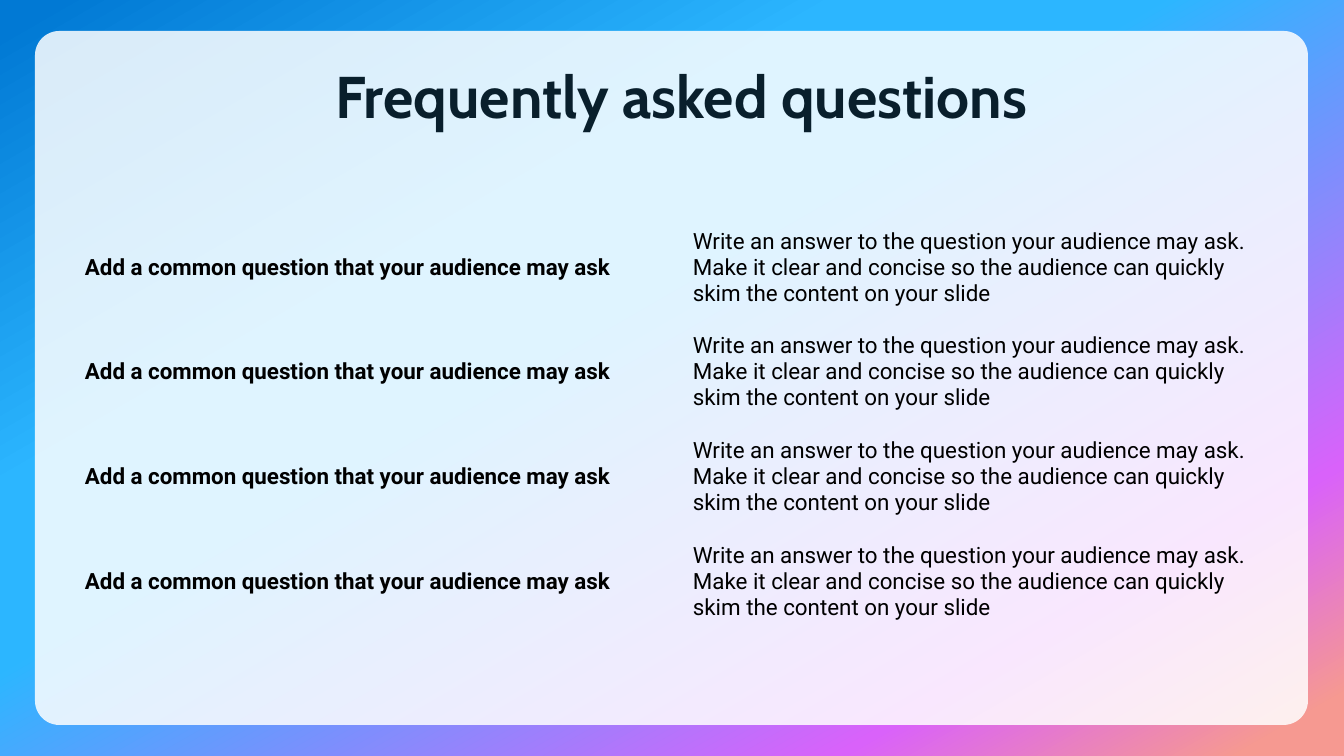
from lxml import etree
from pptx import Presentation
from pptx import util as u
from pptx.dml.color import RGBColor
from pptx.enum import shapes, text
from pptx.oxml.ns import qn

SCALE = 12192000 / 1344
WHITE = RGBColor(0xFF, 0xFF, 0xFF)
BLACK = RGBColor(0, 0, 0)
NAVY = RGBColor(0x09, 0x1F, 0x2C)
GLOW = [
    (2, RGBColor(0x01, 0x79, 0xD4)),
    (32, RGBColor(0x2C, 0xB6, 0xFF)),
    (44, RGBColor(0x2D, 0xB6, 0xFF)),
    (81, RGBColor(0xD9, 0x62, 0xFA)),
    (96, RGBColor(0xF6, 0x99, 0x91)),
]
PLAIN = "{2D5ABB26-0587-4C30-8999-92F81FD0307C}"

QUERY = "Add a common question that your audience may ask"
REPLY = ("Write an answer to the question your audience may ask. "
         "Make it clear and concise so the audience can quickly "
         "skim the content on your slide")
FAQ = [(QUERY, REPLY)] * 4


def px(n):
    return u.Emu(round(n * SCALE))


class Deck:
    head = "Cabin"
    body = "Roboto"

    def __init__(self, wide, high):
        self.prs = Presentation()
        self.prs.slide_width, self.prs.slide_height = px(wide), px(high)
        self.slide = self.prs.slides.add_slide(self.prs.slide_layouts[6])

    def backdrop(self, stops, angle):
        """Fill the background; the angle runs counter-clockwise."""
        fill = self.slide.background.fill
        fill.gradient()
        fill.gradient_angle = angle
        group = next(self.slide.element.iter(qn("a:gsLst")))
        for old in list(group):
            group.remove(old)
        for pos, color in stops:
            stop = etree.SubElement(group, qn("a:gs"), pos=str(pos * 1000))
            etree.SubElement(stop, qn("a:srgbClr"), val=str(color))

    def panel(self, x, y, w, h, color, alpha, bend):
        """Add a rounded card; alpha is its opacity in percent."""
        card = self.slide.shapes.add_shape(
            shapes.MSO_SHAPE.ROUNDED_RECTANGLE, px(x), px(y), px(w), px(h))
        card.adjustments[0] = bend
        card.shadow.inherit = False
        card.fill.solid()
        card.fill.fore_color.rgb = color
        card.line.fill.background()
        tint = next(card.element.spPr.iter(qn("a:srgbClr")))
        etree.SubElement(tint, qn("a:alpha"), val=str(alpha * 1000))

    def run(self, para, words, font, size, color, bold):
        run = para.add_run()
        run.text = words
        run.font.name = font
        run.font.size = u.Pt(size)
        run.font.bold = bold
        run.font.color.rgb = color

    def title(self, x, y, w, h, words):
        box = self.slide.shapes.add_textbox(px(x), px(y), px(w), px(h))
        frame = box.text_frame
        frame.word_wrap = True
        frame.vertical_anchor = text.MSO_ANCHOR.MIDDLE
        para = frame.paragraphs[0]
        para.alignment = text.PP_ALIGN.CENTER
        para.line_spacing = 0.9
        self.run(para, words, self.head, 42, NAVY, True)

    def table(self, x, y, w, h, rows, pad):
        """Add an unruled table whose first column is bold."""
        grid = self.slide.shapes.add_table(
            len(rows), len(rows[0]), px(x), px(y), px(w), px(h)).table
        grid.first_row = grid.horz_banding = False
        next(grid._tbl.iter(qn("a:tableStyleId"))).text = PLAIN
        for r, row in enumerate(rows):
            for c, words in enumerate(row):
                cell = grid.cell(r, c)
                cell.fill.background()
                cell.vertical_anchor = text.MSO_ANCHOR.MIDDLE
                cell.margin_left = cell.margin_right = px(pad)
                cell.margin_top = cell.margin_bottom = px(pad)
                para = cell.text_frame.paragraphs[0]
                self.run(para, words, self.body, 16, BLACK, c == 0)


def main():
    deck = Deck(1344, 756)
    deck.backdrop(GLOW, 300)
    deck.panel(35, 31, 1273, 694, WHITE, 85, 0.035)
    deck.title(73, 40, 1216, 118, "Frequently asked questions")
    deck.table(73, 215, 1216, 419, FAQ, 12)
    deck.prs.save("out.pptx")


if __name__ == "__main__":
    main()
